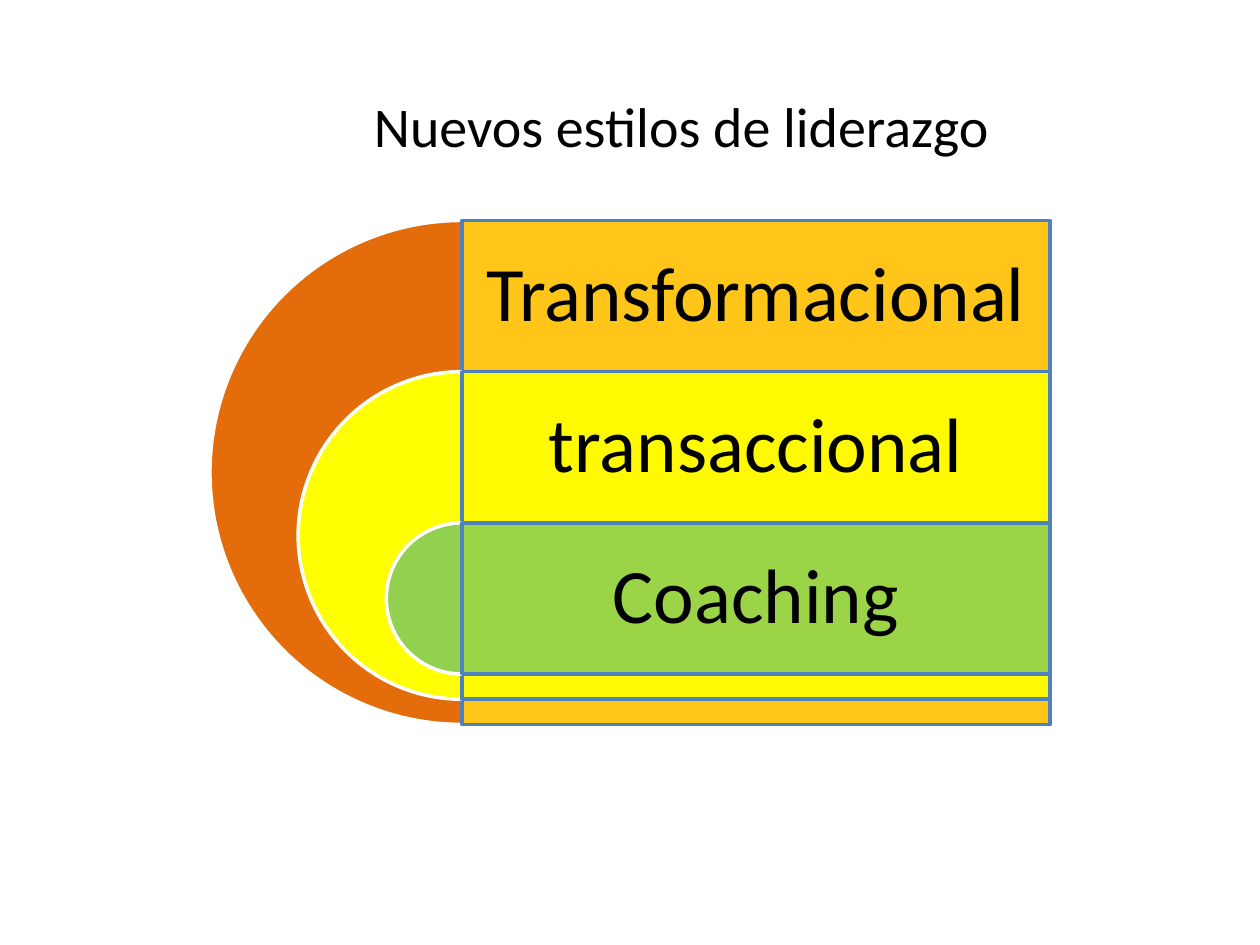
from lxml.etree import SubElement
from pptx import Presentation
from pptx.dml.color import RGBColor
from pptx.enum.shapes import MSO_SHAPE
from pptx.enum.text import MSO_ANCHOR, PP_ALIGN
from pptx.oxml.ns import qn
from pptx.util import Pt

BLACK = RGBColor(0x00, 0x00, 0x00)
WHITE = RGBColor(0xFF, 0xFF, 0xFF)
BLUE = RGBColor(0x4F, 0x81, 0xBD)
ORANGE = RGBColor(0xE4, 0x6C, 0x0A)
AMBER = RGBColor(0xFF, 0xC0, 0x00)
YELLOW = RGBColor(0xFF, 0xFF, 0x00)
GREEN = RGBColor(0x92, 0xD0, 0x50)

AXIS = 264
TOP = 126
BAND_WIDTH = 336
BAND_HEIGHT = 86.4
DIAMETERS = (288, 187.2, 86.4)
STYLES = (
    ("Transformacional", ORANGE, AMBER),
    ("transaccional", YELLOW, YELLOW),
    ("Coaching", GREEN, GREEN),
)


class SlideBuilder:
    font_name = "Calibri"
    line_width = 2
    band_opacity = 90

    def __init__(self, slide):
        self.slide = slide

    def add_outlined(self, kind, left, top, width, height, fill, line):
        shape = self.slide.shapes.add_shape(
            kind, Pt(left), Pt(top), Pt(width), Pt(height))
        shape.shadow.inherit = False
        shape.fill.solid()
        shape.fill.fore_color.rgb = fill
        shape.line.color.rgb = line
        shape.line.width = Pt(self.line_width)
        return shape

    def add_half_circle(self, center, top, diameter, fill):
        shape = self.add_outlined(
            MSO_SHAPE.PIE, center - diameter / 2, top, diameter, diameter, fill, WHITE)
        shape.adjustments[0] = 54
        shape.adjustments[1] = 162

    def add_band(self, left, top, width, height, fill):
        shape = self.add_outlined(
            MSO_SHAPE.RECTANGLE, left, top, width, height, fill, BLUE)
        color = shape.fill._xPr.find(qn("a:solidFill"))[0]
        SubElement(color, qn("a:alpha"), val=str(self.band_opacity * 1000))

    def add_text(self, text, left, top, width, height, size):
        shape = self.slide.shapes.add_textbox(Pt(left), Pt(top), Pt(width), Pt(height))
        frame = shape.text_frame
        frame.word_wrap = True
        run = frame.paragraphs[0].add_run()
        run.text = text
        run.font.name = self.font_name
        run.font.size = Pt(size)
        run.font.color.rgb = BLACK
        return frame

    def add_label(self, text, left, top, width, height):
        frame = self.add_text(text, left, top, width, height, 44)
        frame.vertical_anchor = MSO_ANCHOR.MIDDLE
        frame.margin_left = frame.margin_right = Pt(13)
        frame.margin_top = frame.margin_bottom = Pt(13)
        paragraph = frame.paragraphs[0]
        paragraph.alignment = PP_ALIGN.CENTER
        paragraph.line_spacing = 0.9


def main():
    presentation = Presentation()
    presentation.slide_width = Pt(720)
    presentation.slide_height = Pt(540)
    slide = presentation.slides.add_slide(presentation.slide_layouts[6])
    builder = SlideBuilder(slide)

    builder.add_text("Nuevos estilos de liderazgo", 206.6, 49, 374.4, 46, 32)
    for index, (diameter, (name, circle, band)) in enumerate(zip(DIAMETERS, STYLES)):
        top = TOP + index * BAND_HEIGHT
        builder.add_half_circle(AXIS, top, diameter, circle)
        builder.add_band(AXIS, top, BAND_WIDTH, diameter, band)
        builder.add_label(name, AXIS, top, BAND_WIDTH, BAND_HEIGHT)

    presentation.save("out.pptx")


if __name__ == "__main__":
    main()
